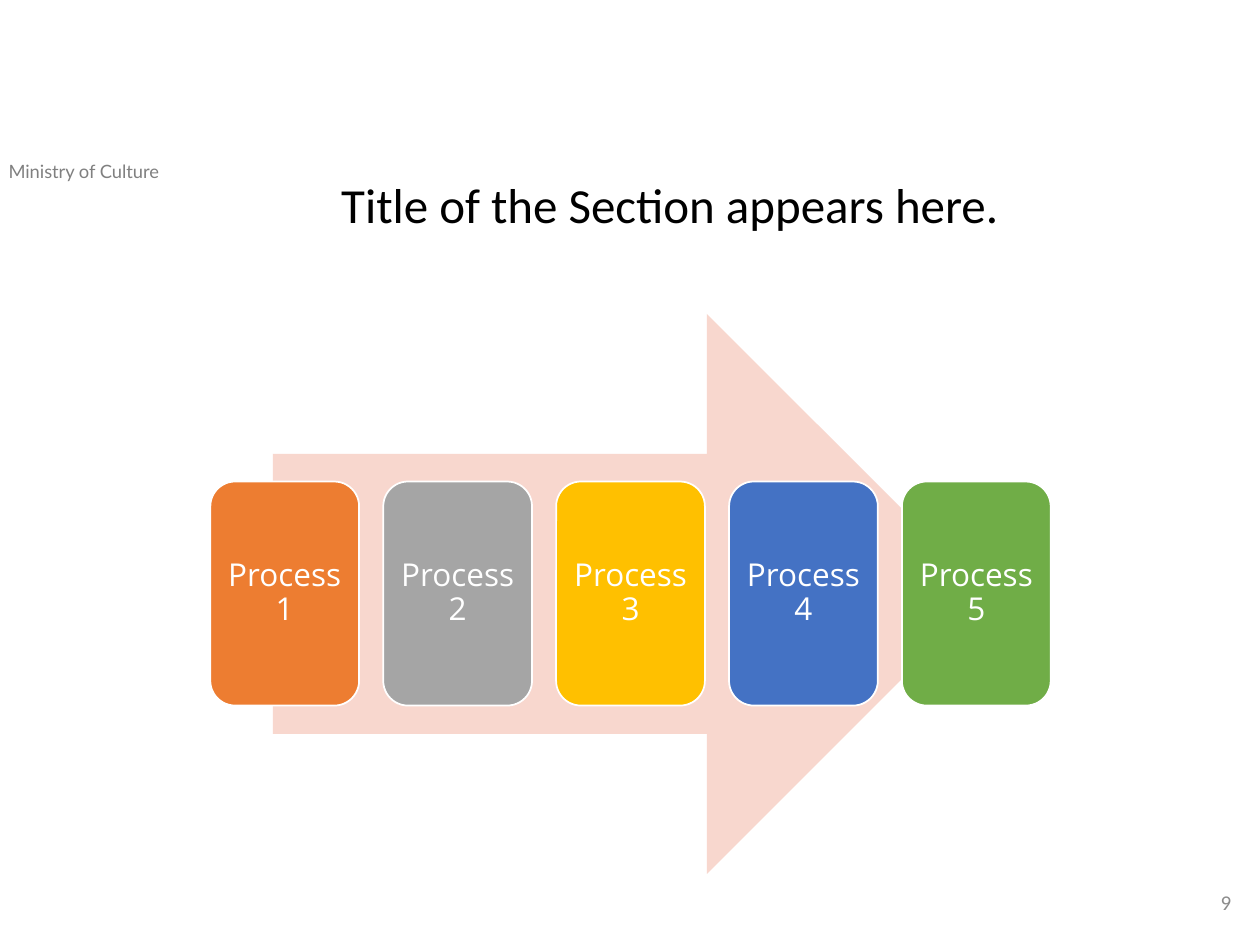
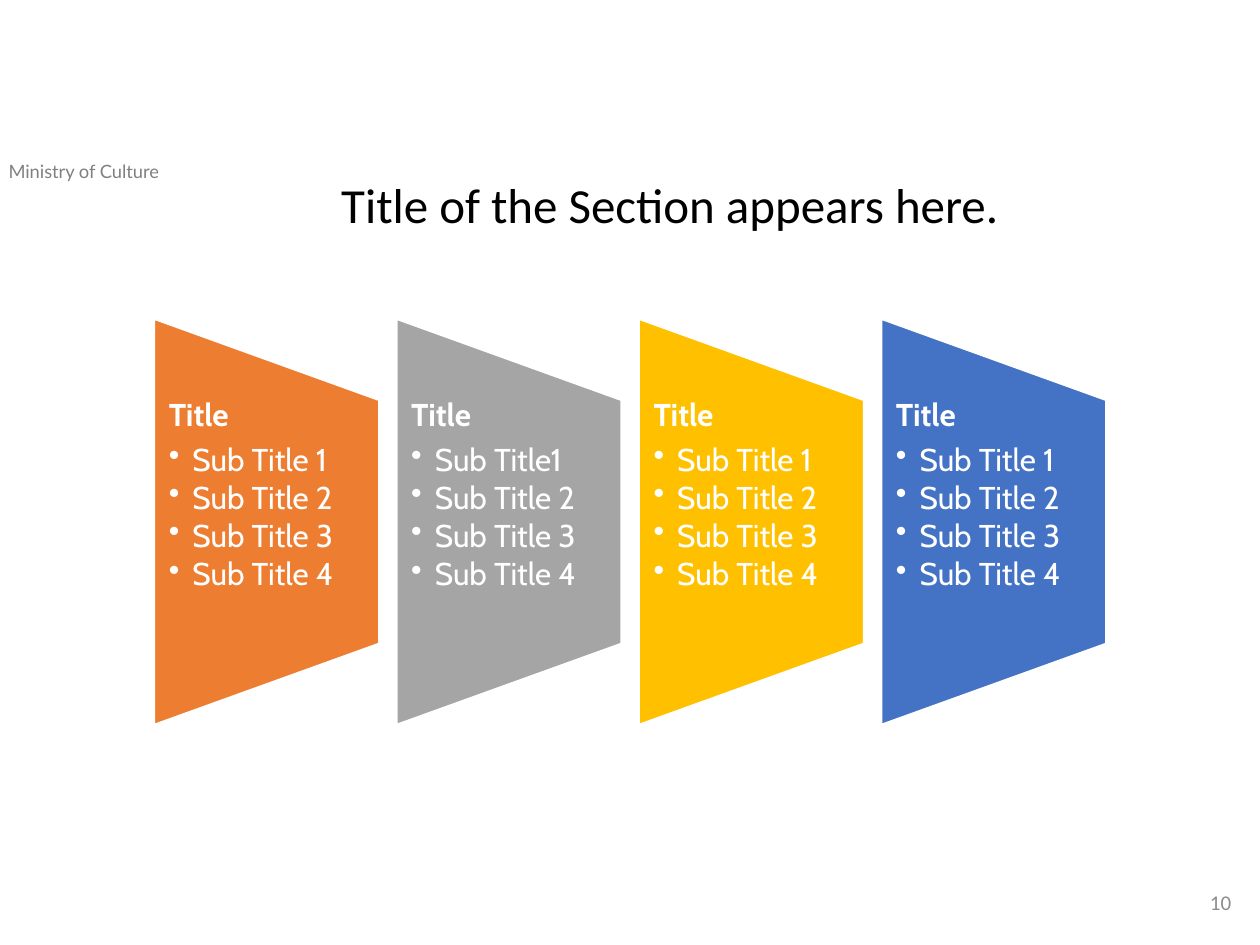
"""Build two section slides: a five-step process arrow and four titled panels."""
from dataclasses import dataclass

from pptx import Presentation
from pptx.dml.color import RGBColor
from pptx.enum.shapes import MSO_SHAPE as Preset
from pptx.enum.text import MSO_ANCHOR as Anchor, PP_ALIGN as Align
from pptx.oxml.ns import qn
from pptx.util import Pt


@dataclass(frozen=True)
class Theme:
    accents: tuple = ("ED7D31", "A5A5A5", "FFC000", "4472C4", "70AD47")
    white: str = "FFFFFF"
    black: str = "000000"
    arrow: str = "F8D7CE"
    footer: str = "808080"
    number: str = "8C8C8C"
    title_size: float = 28
    body_size: float = 18
    number_size: float = 12
    footer_size: float = 10.5
    title_font: str = "Calibri"
    footer_font: str = "Lato"
    step_font: str = "Open Sans"
    panel_font: str = "Cabin"


def apply(target, values):
    for name, value in values.items():
        setattr(target, name, value)


class Deck:
    def __init__(self, presentation, theme):
        self.presentation = presentation
        self.theme = theme
        self.slide = None

    def new_slide(self, title, number):
        theme = self.theme
        self.slide = self.presentation.slides.add_slide(self.presentation.slide_layouts[6])
        self.text_box((-2.2, 87.8, 157, 20.2), ["Ministry of Culture"],
                      self.font(theme.footer_font, theme.footer_size, theme.footer))
        self.text_box((548.6, 501.1, 162, 28.8), [str(number)],
                      self.font(theme.title_font, theme.number_size, theme.number),
                      {"alignment": Align.RIGHT}, {"vertical_anchor": Anchor.MIDDLE})
        self.text_box((187.9, 100.1, 459.4, 56.9), [title],
                      self.font(theme.title_font, theme.title_size, theme.black),
                      {"line_spacing": 0.9})

    def font(self, name, size, color):
        return {"name": name, "size": Pt(size), "color": color}

    def set_text(self, frame, lines, font, layout=None, frame_values=None):
        apply(frame, {"word_wrap": True, **(frame_values or {})})
        for index, line in enumerate(lines):
            paragraph = frame.add_paragraph() if index else frame.paragraphs[0]
            apply(paragraph, layout or {})
            run = paragraph.add_run()
            run.text = line
            values = dict(font)
            run.font.color.rgb = RGBColor.from_string(values.pop("color"))
            apply(run.font, values)
        return frame

    def text_box(self, box, lines, font, layout=None, frame_values=None):
        shape = self.slide.shapes.add_textbox(*map(Pt, box))
        return self.set_text(shape.text_frame, lines, font, layout, frame_values)

    def shape(self, preset, box, color, line_width=0, rotation=0):
        shape = self.slide.shapes.add_shape(preset, *map(Pt, box))
        shape.shadow.inherit = False
        shape.rotation = rotation
        shape.fill.solid()
        shape.fill.fore_color.rgb = RGBColor.from_string(color)
        if line_width:
            shape.line.color.rgb = RGBColor.from_string(self.theme.white)
            shape.line.width = Pt(line_width)
        else:
            shape.line.fill.background()
        return shape

    def step(self, box, label, color):
        shape = self.shape(Preset.ROUNDED_RECTANGLE, box, color, line_width=1)
        sides = ("left", "right", "top", "bottom")
        margins = {f"margin_{side}": Pt(5) for side in sides}
        self.set_text(shape.text_frame, [label],
                      self.font(self.theme.step_font, self.theme.body_size, self.theme.white),
                      {"alignment": Align.CENTER, "line_spacing": 0.9},
                      {"vertical_anchor": Anchor.MIDDLE, **margins})

    def panel(self, left, middle, width, height, lines, color):
        turned_box = (left + (width - height) / 2, middle - width / 2, height, width)
        self.shape(Preset.FLOWCHART_MANUAL_OPERATION, turned_box, color,
                   line_width=1.5, rotation=270)
        font = self.font(self.theme.panel_font, self.theme.body_size, self.theme.white)
        frame = self.text_box((left, middle - 70, width, 140), lines, font,
                              {"line_spacing": 0.9, "space_after": Pt(2.4)},
                              {"margin_left": Pt(8.5), "margin_right": Pt(8.5),
                               "margin_top": 0, "margin_bottom": 0})
        heading, *items = frame.paragraphs
        heading.space_after = Pt(6)
        heading.runs[0].font.bold = True
        for item in items:
            self.bullet(item)

    def bullet(self, paragraph):
        paragraph.level = 1
        properties = paragraph._p.get_or_add_pPr()
        properties.set("marL", str(Pt(13.5)))
        properties.set("indent", str(-Pt(13.5)))
        properties.append(properties.makeelement(qn("a:buChar"), {"char": "•"}))


def main():
    presentation = Presentation()
    apply(presentation, {"slide_width": Pt(720), "slide_height": Pt(540)})
    theme = Theme()
    deck = Deck(presentation, theme)
    title = "Title of the Section appears here."

    deck.new_slide(title, 9)
    deck.shape(Preset.RIGHT_ARROW, (156, 179.4, 408, 320), theme.arrow)
    for index, color in enumerate(theme.accents):
        deck.step((120.2 + 98.8 * index, 275.2, 85, 128), f"Process {index + 1}", color)

    deck.new_slide(title, 10)
    first_items = ("Sub Title 1", "Sub Title1", "Sub Title 1", "Sub Title 1")
    other_items = [f"Sub Title {number}" for number in range(2, 5)]
    for index, (first_item, color) in enumerate(zip(first_items, theme.accents)):
        deck.panel(88 + 138.5 * index, 298.2, 128.8, 232.4,
                   ["Title", first_item, *other_items], color)

    presentation.save("out.pptx")


if __name__ == "__main__":
    main()
